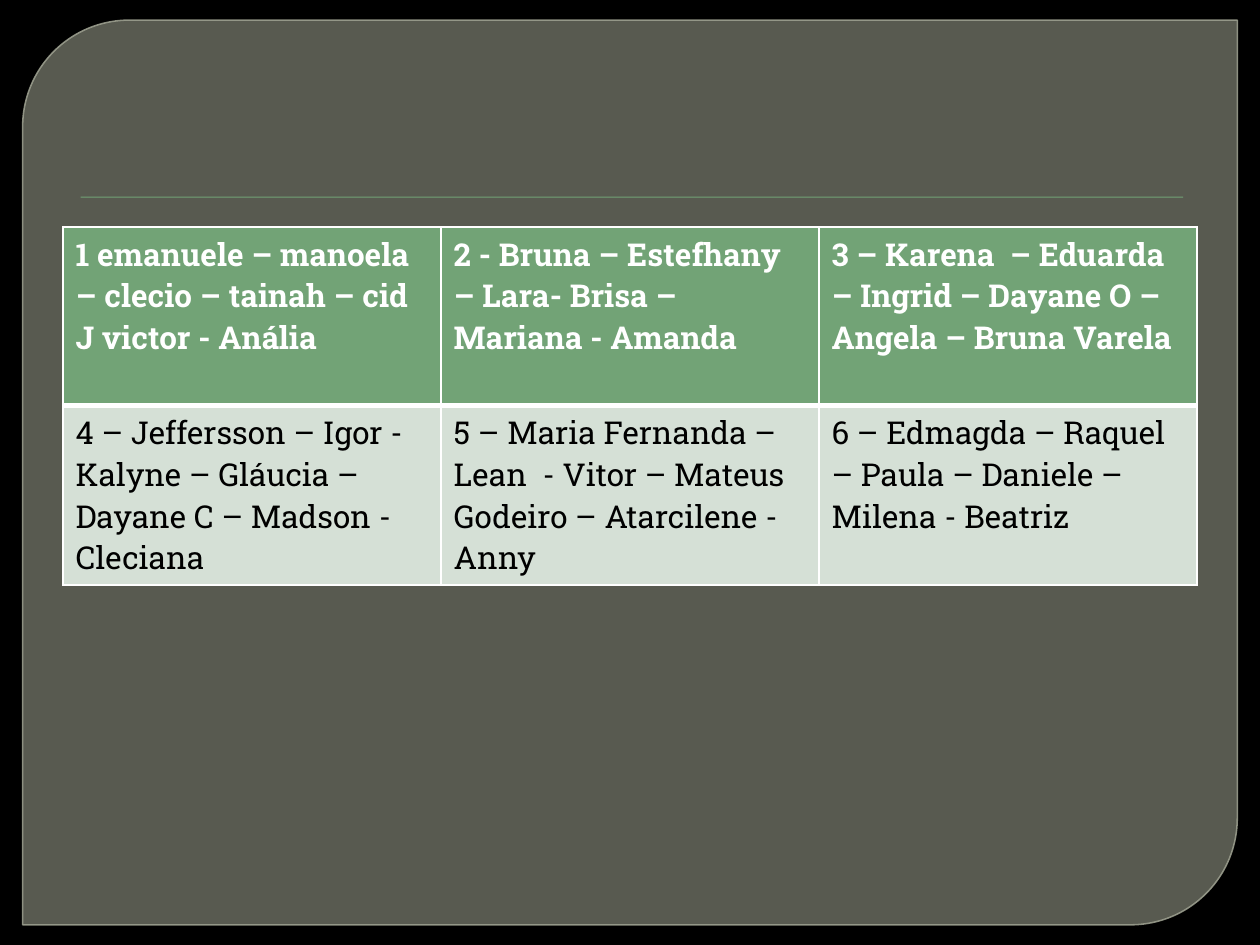
from lxml.etree import SubElement
from pptx import Presentation
from pptx.dml.color import RGBColor
from pptx.enum.shapes import MSO_SHAPE as Shape
from pptx.oxml.ns import qn
from pptx.util import Inches, Pt

FONT = "Roboto Slab"
GREEN, WHITE, BLACK = "72A376", "FFFFFF", "000000"
GROUPS = [
    ["1 emanuele – manoela – clecio – tainah – cid\nJ victor - Anália",
     "2 - Bruna – Estefhany – Lara- Brisa – Mariana - Amanda",
     "3 – Karena  – Eduarda – Ingrid – Dayane O – Angela – Bruna Varela"],
    ["4 – Jeffersson – Igor - Kalyne – Gláucia – Dayane C – Madson - Cleciana",
     "5 – Maria Fernanda – Lean  - Vitor – Mateus Godeiro – Atarcilene - Anny",
     "6 – Edmagda – Raquel – Paula – Daniele – Milena - Beatriz"],
]
ROW_STYLES = [
    {"fill": GREEN, "color": WHITE, "bold": True, "borders": {"L": 1, "R": 1, "T": 1, "B": 3}},
    {"fill": "D5E0D6", "color": BLACK, "bold": False, "borders": {"L": 1, "R": 1, "T": 3, "B": 1}},
]
COLUMN_WIDTH, ROW_HEIGHT = 3, 1.42


def paint(fill, color, opacity=100):
    fill.solid()
    fill.fore_color.rgb = RGBColor.from_string(color)
    if opacity < 100:
        add_opacity(fill._xPr.find(qn("a:solidFill"))[0], opacity)


def add_opacity(color_element, opacity):
    SubElement(color_element, qn("a:alpha"), val=str(opacity * 1000))


def add_panel(page, kind, left, top, width, height, color, opacity=100):
    panel = page.shapes.add_shape(kind, Inches(left), Inches(top), Inches(width), Inches(height))
    panel.shadow.inherit = False
    paint(panel.fill, color, opacity)
    panel.line.fill.background()
    return panel


def style_cell(cell, text, style):
    properties = cell._tc.get_or_add_tcPr()
    for side, points in style["borders"].items():
        border = SubElement(properties, qn(f"a:ln{side}"), w=str(Pt(points)))
        solid = SubElement(border, qn("a:solidFill"))
        SubElement(solid, qn("a:srgbClr"), val=WHITE)
    paint(cell.fill, style["fill"])
    cell.text_frame.text = text
    for para in cell.text_frame.paragraphs:
        for span in para.runs:
            span.font.name = FONT
            span.font.size = Pt(18)
            span.font.bold = style["bold"]
            span.font.color.rgb = RGBColor.from_string(style["color"])


def add_groups(page):
    rows, columns = len(GROUPS), len(GROUPS[0])
    table = page.shapes.add_table(
        rows, columns, Inches(0.5), Inches(1.8),
        Inches(columns * COLUMN_WIDTH), Inches(rows * ROW_HEIGHT)).table
    for row, texts, style in zip(table.rows, GROUPS, ROW_STYLES):
        row.height = Inches(ROW_HEIGHT)
        for cell, text in zip(row.cells, texts):
            style_cell(cell, text, style)


def main():
    """Build the slide that lists the six student groups."""
    deck = Presentation()
    deck.slide_width, deck.slide_height = Inches(10), Inches(7.5)
    page = deck.slides.add_slide(deck.slide_layouts[6])
    paint(page.background.fill, BLACK)

    frame = add_panel(page, Shape.ROUND_2_DIAG_RECTANGLE, 0.18, 0.16, 9.64, 7.18, "888B7B", 65)
    frame.adjustments[0] = 0.118
    frame.line.width = Pt(0.87)
    paint(frame.line.fill, "9DA090", 88)

    add_panel(page, Shape.RECTANGLE, 0.64, 1.56, 8.75, 0.01, GREEN)
    add_groups(page)
    deck.save("out.pptx")


if __name__ == "__main__":
    main()
